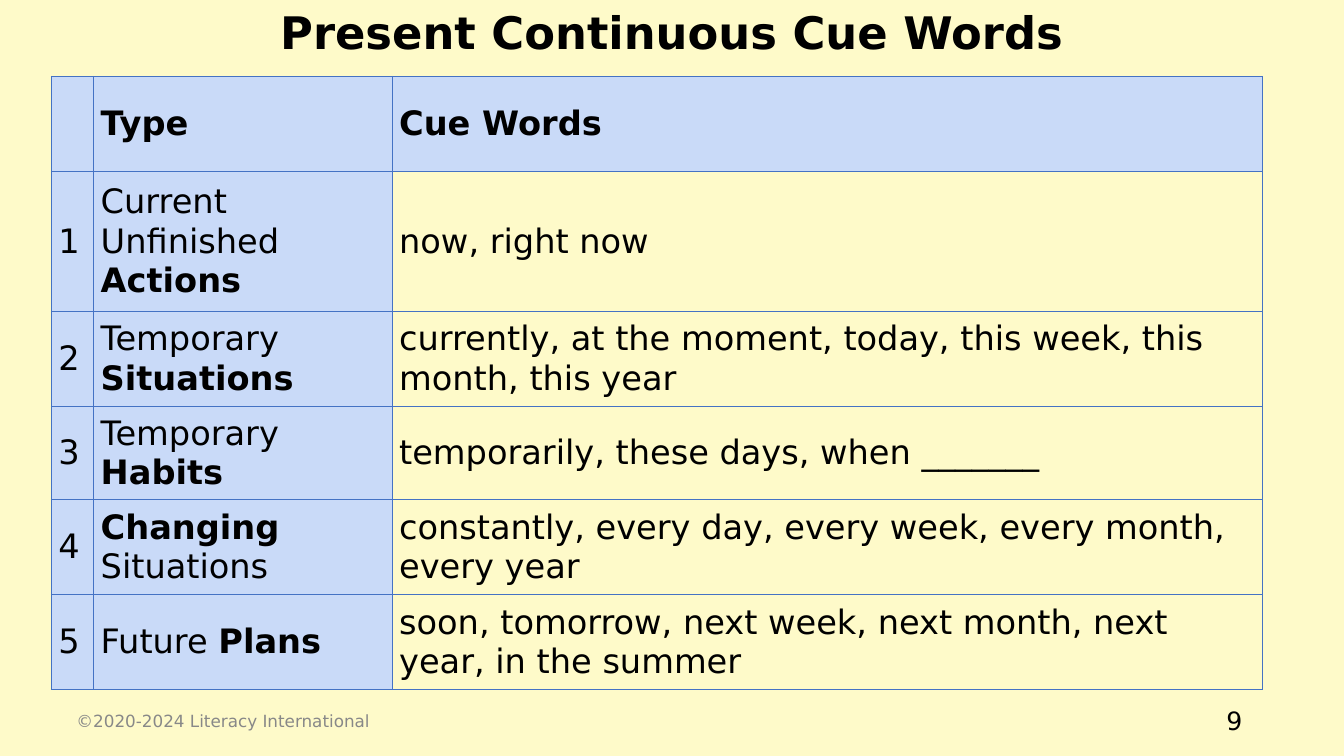
from lxml import etree
from pptx import Presentation
from pptx.dml.color import RGBColor
from pptx.enum import text
from pptx.oxml import ns
from pptx.util import Inches, Pt

FONT = "DejaVu Sans"
COLORS = {
    "background": "FEFAC9",
    "label": "C9DAF8",
    "border": "4472C4",
    "ink": "000000",
    "muted": "888888",
}
COLUMN_WIDTHS = [0.42, 2.96, 8.63]
ROW_HEIGHTS = [0.94, 1.39, 0.94, 0.93, 0.94, 0.94]
# Each cell is a list of (words, bold) runs.
ROWS = [
    [[], [("Type", True)], [("Cue Words", True)]],
    [[("1", False)],
     [("Current Unfinished ", False), ("Actions", True)],
     [("now, right now", False)]],
    [[("2", False)],
     [("Temporary ", False), ("Situations", True)],
     [("currently, at the moment, today, this week, this month, this year", False)]],
    [[("3", False)],
     [("Temporary ", False), ("Habits", True)],
     [("temporarily, these days, when _______", False)]],
    [[("4", False)],
     [("Changing ", True), ("Situations", False)],
     [("constantly, every day, every week, every month, every year", False)]],
    [[("5", False)],
     [("Future ", False), ("Plans", True)],
     [("soon, tomorrow, next week, next month, next year, in the summer", False)]],
]
LEFT, CENTER, RIGHT = text.PP_ALIGN.LEFT, text.PP_ALIGN.CENTER, text.PP_ALIGN.RIGHT
TOP, MIDDLE = text.MSO_ANCHOR.TOP, text.MSO_ANCHOR.MIDDLE
# Words, place, size, bold, colour, alignment, anchor.
CAPTIONS = [
    ("Present Continuous Cue Words", (0.82, 0, 11.69, 0.84), 32, True, "ink", CENTER, TOP),
    ("9", (9.42, 6.95, 3, 0.4), 18, False, "ink", RIGHT, MIDDLE),
    ("©2020-2024 Literacy International", (0.66, 6.95, 4.5, 0.4), 12, False, "muted",
     LEFT, MIDDLE),
]


def add_run(paragraph, words, size, bold, color):
    run = paragraph.add_run()
    run.text = words
    run.font.name = FONT
    run.font.size = Pt(size)
    run.font.bold = bold
    run.font.color.rgb = RGBColor.from_string(COLORS[color])


def add_borders(cell):
    """Draw a one-point line on all four sides; call before setting the fill."""
    properties = cell._tc.get_or_add_tcPr()
    for side in ("a:lnL", "a:lnR", "a:lnT", "a:lnB"):
        line = etree.SubElement(properties, ns.qn(side), w=str(Pt(1)))
        fill = etree.SubElement(line, ns.qn("a:solidFill"))
        etree.SubElement(fill, ns.qn("a:srgbClr"), val=COLORS["border"])


prs = Presentation()
prs.slide_width, prs.slide_height = Inches(13.33), Inches(7.5)
slide = prs.slides.add_slide(prs.slide_layouts[6])
slide.background.fill.solid()
slide.background.fill.fore_color.rgb = RGBColor.from_string(COLORS["background"])

cue_table = slide.shapes.add_table(
    len(ROWS), len(COLUMN_WIDTHS), Inches(0.51), Inches(0.76),
    Inches(sum(COLUMN_WIDTHS)), Inches(sum(ROW_HEIGHTS))).table
cue_table.horz_banding = False
for column, width in zip(cue_table.columns, COLUMN_WIDTHS):
    column.width = Inches(width)
for row, height in zip(cue_table.rows, ROW_HEIGHTS):
    row.height = Inches(height)

for r, row_cells in enumerate(ROWS):
    for c, runs in enumerate(row_cells):
        cell = cue_table.cell(r, c)
        cell.vertical_anchor = MIDDLE
        cell.margin_left = cell.margin_right = Inches(0.07)
        cell.margin_top = cell.margin_bottom = Inches(0.07)
        add_borders(cell)
        if r == 0 or c < 2:
            cell.fill.solid()
            cell.fill.fore_color.rgb = RGBColor.from_string(COLORS["label"])
        else:
            cell.fill.background()
        for words, bold in runs:
            add_run(cell.text_frame.paragraphs[0], words, 24, bold, "ink")

for words, place, size, bold, color, alignment, anchor in CAPTIONS:
    frame = slide.shapes.add_textbox(*map(Inches, place)).text_frame
    frame.word_wrap = True
    frame.vertical_anchor = anchor
    frame.paragraphs[0].alignment = alignment
    add_run(frame.paragraphs[0], words, size, bold, color)

prs.save("out.pptx")
